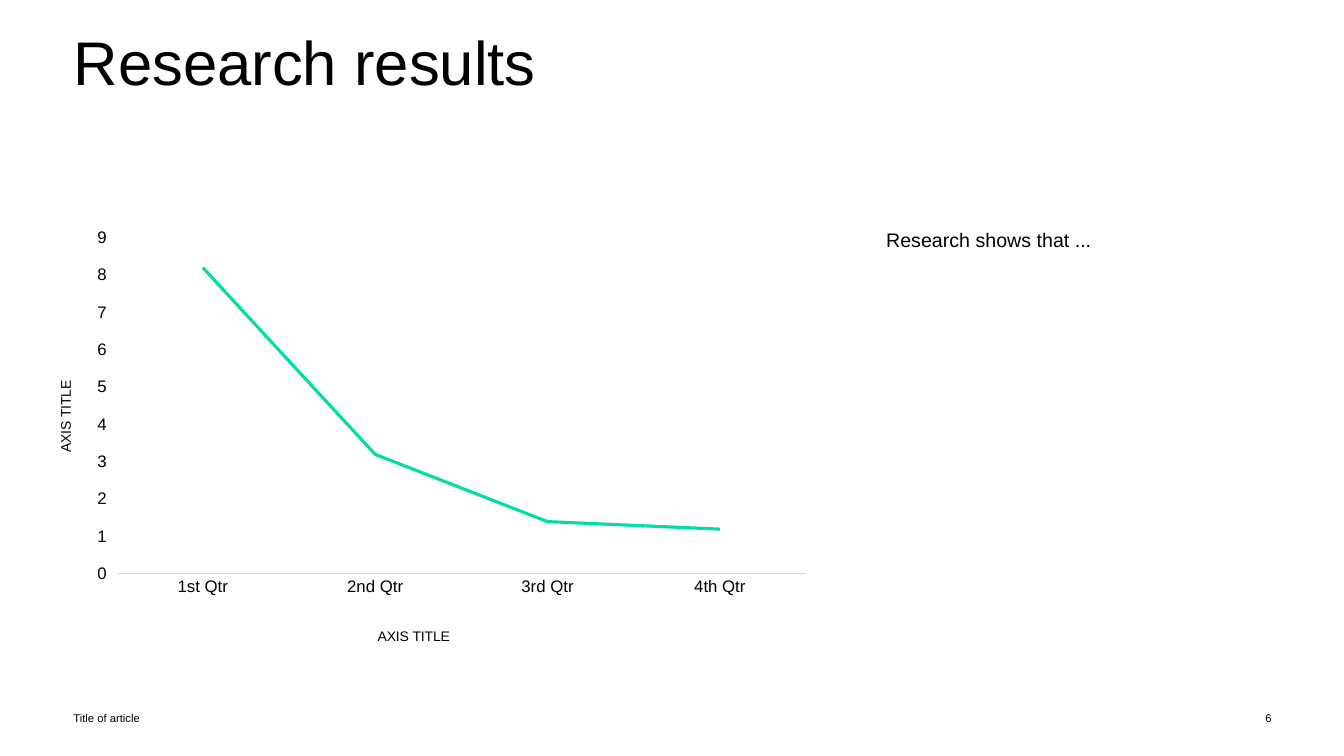
import pptx
import pptx.chart.data
import pptx.dml.color
import pptx.enum.chart
import pptx.enum.text
import pptx.oxml
import pptx.oxml.ns
import pptx.util

BLACK = pptx.dml.color.RGBColor(0, 0, 0)
GREEN = pptx.dml.color.RGBColor(0x00, 0xDD, 0xA5)
GREY = pptx.dml.color.RGBColor(0xD9, 0xD9, 0xD9)
WIDE, HIGH = 13.33, 7.5
FONT = "Arial"
ALIGN = pptx.enum.text.PP_ALIGN
ANCHOR = pptx.enum.text.MSO_ANCHOR
TICK = pptx.enum.chart.XL_TICK_MARK


def inches(box):
    return [pptx.util.Inches(side) for side in box]


def style(font, size):
    font.name = FONT
    font.size = pptx.util.Pt(size)
    font.bold = False
    font.color.rgb = BLACK


def write(shape, text, size, space, align=ALIGN.LEFT, anchor=ANCHOR.TOP):
    frame = shape.text_frame
    frame.word_wrap = True
    frame.auto_size = pptx.enum.text.MSO_AUTO_SIZE.NONE
    frame.vertical_anchor = anchor
    line = frame.paragraphs[0]
    line.text = text
    line.alignment = align
    line.line_spacing = space
    style(line.font, size)


def add_title(slide, box):
    title = slide.shapes.title
    title.left, title.top, title.width, title.height = inches(box)
    write(title, "Research results", 44, 0.9)


def add_note(slide, box):
    note = slide.shapes.add_textbox(*inches(box))
    write(note, "Research shows that ...", 14, 1.1)


def add_footer(slide, box):
    left, top, width, height = box
    cell = 2.62
    parts = (
        (left, "Title of article", ALIGN.LEFT),
        (left + width - cell, "6", ALIGN.RIGHT),
    )
    for start, text, align in parts:
        part = slide.shapes.add_textbox(*inches((start, top, cell, height)))
        write(part, text, 8, 0.9, align, ANCHOR.MIDDLE)


def place(owner, **shares):
    tag = pptx.oxml.ns.qn("c:layout")
    layout = owner.find(tag)
    if layout is None:
        layout = owner.makeelement(tag)
        owner.insert(0, layout)
    target = '<c:layoutTarget val="inner"/>' if "w" in shares else ""
    modes = "".join(f'<c:{key}Mode val="edge"/>' for key in shares if key in "xy")
    sizes = "".join(f'<c:{key} val="{share}"/>' for key, share in shares.items())
    space = pptx.oxml.ns.nsdecls("c")
    layout.append(pptx.oxml.parse_xml(
        f"<c:manualLayout {space}>{target}{modes}{sizes}</c:manualLayout>"))


def set_axis(axis, x, y):
    axis.has_major_gridlines = False
    axis.major_tick_mark = axis.minor_tick_mark = TICK.NONE
    style(axis.tick_labels.font, 12)
    line = axis.axis_title.text_frame.paragraphs[0]
    line.text = "AXIS TITLE"
    style(line.font, 10)
    place(axis.axis_title.element, x=x, y=y)


def add_chart(slide, box):
    data = pptx.chart.data.CategoryChartData()
    data.categories = ["1st Qtr", "2nd Qtr", "3rd Qtr", "4th Qtr"]
    data.add_series("Series 1", (8.2, 3.2, 1.4, 1.2))
    kind = pptx.enum.chart.XL_CHART_TYPE.LINE
    chart = slide.shapes.add_chart(kind, *inches(box), data).chart
    chart.has_title = False
    chart.has_legend = False
    style(chart.font, 10)
    chart.plots[0].vary_by_categories = False

    quarter = chart.category_axis
    set_axis(quarter, 0.43, 0.95)
    quarter.format.line.color.rgb = GREY
    quarter.format.line.width = pptx.util.Pt(0.75)

    value = chart.value_axis
    set_axis(value, 0.02, 0.37)
    value.major_tick_mark = TICK.OUTSIDE
    value.format.line.fill.background()
    value.minimum_scale, value.maximum_scale, value.major_unit = 0, 9, 1

    series = chart.plots[0].series[0]
    series.smooth = False
    series.marker.style = pptx.enum.chart.XL_MARKER_STYLE.NONE
    series.format.line.color.rgb = GREEN
    series.format.line.width = pptx.util.Pt(2.25)
    plot = chart.element.find(".//" + pptx.oxml.ns.qn("c:plotArea"))
    place(plot, x=0.1, y=0.04, w=0.88, h=0.79)


def main():
    deck = pptx.Presentation()
    deck.slide_width, deck.slide_height = inches((WIDE, HIGH))
    slide = deck.slides.add_slide(deck.slide_layouts[5])
    edge, top = 0.63, 2.19
    add_footer(slide, (edge, 6.76, 12.08, 0.74))
    add_chart(slide, (0.38, top, 7.77, 4.25))
    add_note(slide, (8.69, top, 3.38, 2.64))
    add_title(slide, (edge, 0.27, 11.79, 1.45))
    deck.save("out.pptx")


if __name__ == "__main__":
    main()
